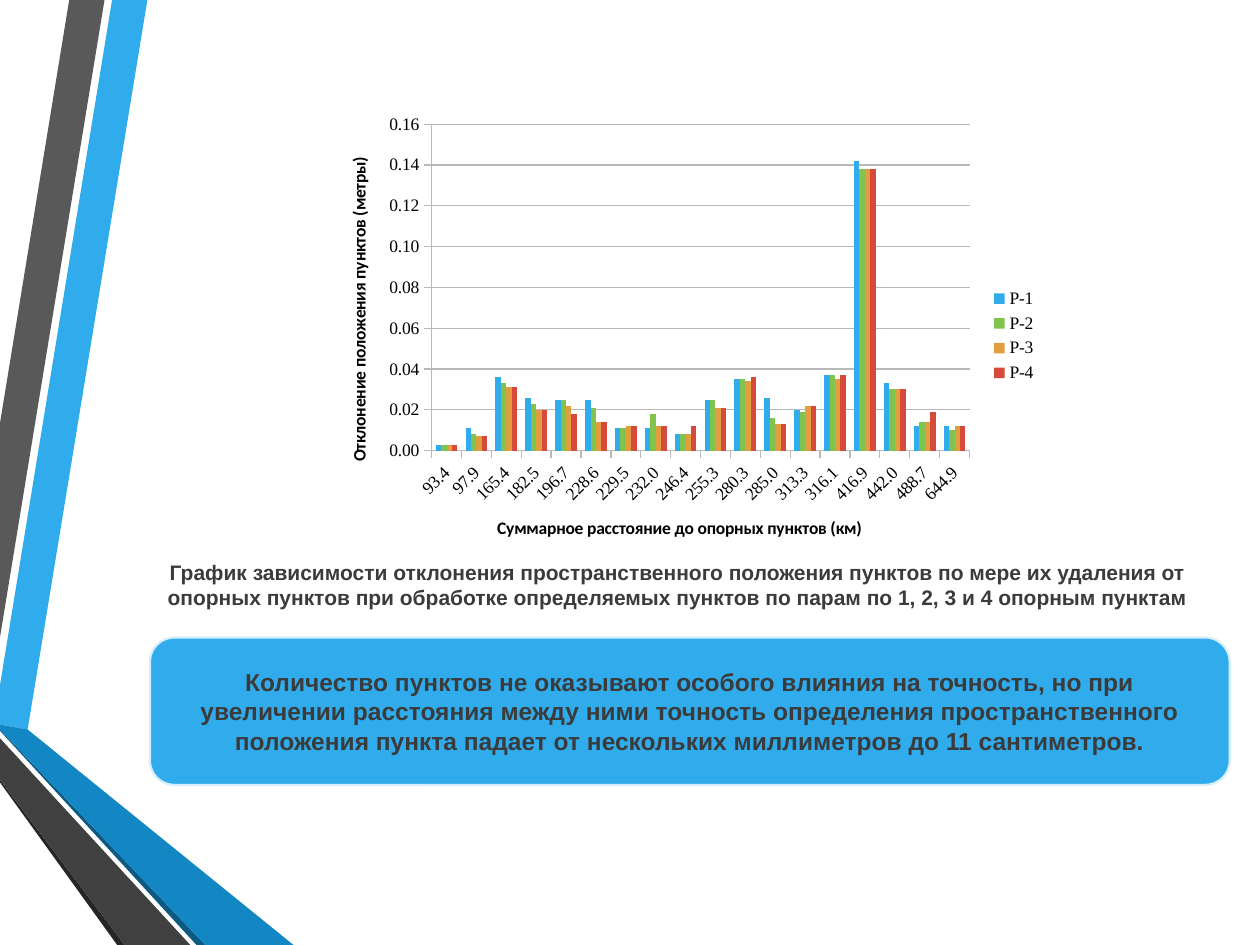
from dataclasses import dataclass

from lxml.etree import SubElement
from pptx import Presentation
from pptx.chart.data import CategoryChartData
from pptx.dml.color import RGBColor
from pptx.enum.chart import XL_CHART_TYPE, XL_LEGEND_POSITION, XL_TICK_MARK
from pptx.enum.shapes import MSO_SHAPE
from pptx.enum.text import MSO_ANCHOR, PP_ALIGN
from pptx.oxml.ns import qn
from pptx.util import Inches, Pt

COLORS = {
    "blue": "30ACEC", "deep_blue": "1287C3", "dark_blue": "0C5A82",
    "gray": "595959", "charcoal": "404040", "black_gray": "262626",
    "green": "80C34F", "orange": "E29D3E", "red": "D64A3B",
    "text": "3B3B3B", "border": "D6EEFB", "grid": "B9B9B9", "black": "000000",
}
CELL = 0.1
POINTS_PER_CELL = 10


@dataclass(frozen=True)
class Area:
    col: float
    row: float
    cols: float
    rows: float

    def box(self) -> tuple:
        return tuple(Inches(n * CELL) for n in (self.col, self.row, self.cols, self.rows))


@dataclass(frozen=True)
class Ribbon:
    color: str
    corners: tuple


@dataclass(frozen=True)
class Variant:
    name: str
    color: str
    deviations: tuple


RIBBONS = (
    Ribbon("blue", ((0, 54.4), (0, 57.5), (2.2, 57.9), (11.7, 0), (8.9, 0))),
    Ribbon("gray", ((8.3, 0), (5.5, 0), (0, 33.6), (0, 50.6))),
    Ribbon("black_gray", ((0, 61.9), (0, 62.1), (9.3, 75), (9.9, 75))),
    Ribbon("dark_blue", ((0, 57.9), (0, 58), (15.6, 75), (16.3, 75))),
    Ribbon("deep_blue", ((0, 57.9), (16.3, 75), (23.3, 75), (2.2, 57.9), (0, 57.5))),
    Ribbon("charcoal", ((0, 61.9), (9.9, 75), (15.1, 75), (0, 58.6))),
)
DISTANCES = ("93.4", "97.9", "165.4", "182.5", "196.7", "228.6", "229.5", "232.0", "246.4",
             "255.3", "280.3", "285.0", "313.3", "316.1", "416.9", "442.0", "488.7", "644.9")
VARIANTS = (
    Variant("P-1", "blue", (0.003, 0.011, 0.036, 0.026, 0.025, 0.025, 0.011, 0.011, 0.008,
                            0.025, 0.035, 0.026, 0.02, 0.037, 0.142, 0.033, 0.012, 0.012)),
    Variant("P-2", "green", (0.003, 0.008, 0.033, 0.023, 0.025, 0.021, 0.011, 0.018, 0.008,
                             0.025, 0.035, 0.016, 0.019, 0.037, 0.138, 0.03, 0.014, 0.01)),
    Variant("P-3", "orange", (0.003, 0.007, 0.031, 0.02, 0.022, 0.014, 0.012, 0.012, 0.008,
                              0.021, 0.034, 0.013, 0.022, 0.035, 0.138, 0.03, 0.014, 0.012)),
    Variant("P-4", "red", (0.003, 0.007, 0.031, 0.02, 0.018, 0.014, 0.012, 0.012, 0.012,
                           0.021, 0.036, 0.013, 0.022, 0.037, 0.138, 0.03, 0.019, 0.012)),
)
PLOT_SHARES = {"x": 0.15, "y": 0.04, "w": 0.74, "h": 0.71}
CAPTION = ("График зависимости отклонения пространственного положения пунктов по мере их "
           "удаления от опорных пунктов при обработке определяемых пунктов по парам "
           "по 1, 2, 3 и 4 опорным пунктам")
CONCLUSION = ("Количество пунктов не оказывают особого влияния на точность, но при увеличении "
              "расстояния между ними точность определения пространственного положения пункта "
              "падает от нескольких миллиметров до 11 сантиметров.")


def rgb(color: str) -> RGBColor:
    return RGBColor.from_string(COLORS[color])


def style_font(font, name: str, size: float = 10, color: str = "black", bold: bool = False) -> None:
    font.name, font.size, font.bold = name, Pt(size), bold
    font.color.rgb = rgb(color)


def write(frame, text: str, align=PP_ALIGN.CENTER, anchor=MSO_ANCHOR.TOP, **font_format) -> None:
    frame.word_wrap = True
    frame.vertical_anchor = anchor
    paragraph = frame.paragraphs[0]
    paragraph.alignment = align
    run = paragraph.add_run()
    run.text = text
    style_font(run.font, **font_format)


def draw_ribbon(shapes, ribbon: Ribbon) -> None:
    start, *others = [tuple(round(n * POINTS_PER_CELL) for n in corner)
                      for corner in ribbon.corners]
    builder = shapes.build_freeform(*start, scale=Inches(CELL) / POINTS_PER_CELL)
    builder.add_line_segments(others, close=True)
    band = builder.convert_to_shape()
    band.shadow.inherit = False
    band.fill.solid()
    band.fill.fore_color.rgb = rgb(ribbon.color)
    band.line.fill.background()


def style_axis(axis, title: str) -> None:
    write(axis.axis_title.text_frame, title, name="Calibri", bold=True)
    style_font(axis.tick_labels.font, "Times New Roman")
    axis.major_tick_mark = XL_TICK_MARK.OUTSIDE
    axis.minor_tick_mark = XL_TICK_MARK.NONE
    axis.format.line.color.rgb = rgb("grid")


def place_plot(chart) -> None:
    plot_area = chart.plots[0]._element.getparent()
    for old_layout in plot_area.findall(qn("c:layout")):
        plot_area.remove(old_layout)
    layout = SubElement(plot_area, qn("c:layout"))
    plot_area.insert(0, layout)
    manual = SubElement(layout, qn("c:manualLayout"))
    SubElement(manual, qn("c:layoutTarget")).set("val", "inner")
    for side in "xy":
        SubElement(manual, qn(f"c:{side}Mode")).set("val", "edge")
    for side, share in PLOT_SHARES.items():
        SubElement(manual, qn(f"c:{side}")).set("val", str(share))


def draw_chart(shapes, area: Area) -> None:
    table = CategoryChartData(number_format="0.00")
    table.categories = DISTANCES
    for variant in VARIANTS:
        table.add_series(variant.name, variant.deviations)
    chart = shapes.add_chart(XL_CHART_TYPE.COLUMN_CLUSTERED, *area.box(), table).chart
    chart.has_title = False
    style_font(chart.font, "Calibri")
    columns = chart.plots[0]
    columns.gap_width, columns.overlap, columns.vary_by_categories = 150, 0, False
    for series, variant in zip(columns.series, VARIANTS):
        series.format.fill.solid()
        series.format.fill.fore_color.rgb = rgb(variant.color)
    distance, deviation = chart.category_axis, chart.value_axis
    style_axis(distance, "Суммарное расстояние до опорных пунктов (км)")
    style_axis(deviation, "Отклонение положения пунктов (метры)")
    distance._element.find(qn("c:txPr")).find(qn("a:bodyPr")).set("rot", str(-45 * 60000))
    deviation.axis_title.text_frame._txBody.find(qn("a:bodyPr")).set("rot", str(-90 * 60000))
    deviation.minimum_scale, deviation.maximum_scale, deviation.major_unit = 0, 0.16, 0.02
    deviation.tick_labels.number_format = "0.00"
    deviation.tick_labels.number_format_is_linked = False
    deviation.major_gridlines.format.line.color.rgb = rgb("grid")
    chart.has_legend = True
    chart.legend.position = XL_LEGEND_POSITION.RIGHT
    chart.legend.include_in_layout = False
    style_font(chart.legend.font, "Times New Roman")
    place_plot(chart)


def draw_conclusion(shapes, area: Area) -> None:
    panel = shapes.add_shape(MSO_SHAPE.ROUNDED_RECTANGLE, *area.box())
    panel.shadow.inherit = False
    panel.fill.solid()
    panel.fill.fore_color.rgb = rgb("blue")
    panel.line.color.rgb = rgb("border")
    panel.line.width = Pt(1.25)
    write(panel.text_frame, CONCLUSION, anchor=MSO_ANCHOR.MIDDLE,
          name="Arial", size=14, color="text", bold=True)


def main() -> None:
    deck = Presentation()
    deck.slide_width, deck.slide_height = Inches(10), Inches(7.5)
    shapes = deck.slides.add_slide(deck.slide_layouts[6]).shapes
    for ribbon in RIBBONS:
        draw_ribbon(shapes, ribbon)
    draw_chart(shapes, Area(25.6, 8.4, 57.7, 36.5))
    caption = shapes.add_textbox(*Area(9.3, 43.9, 89, 5).box())
    write(caption.text_frame, CAPTION, name="Arial", size=12, color="text", bold=True)
    draw_conclusion(shapes, Area(11.9, 50.6, 85.7, 11.7))
    deck.save("out.pptx")


if __name__ == "__main__":
    main()
